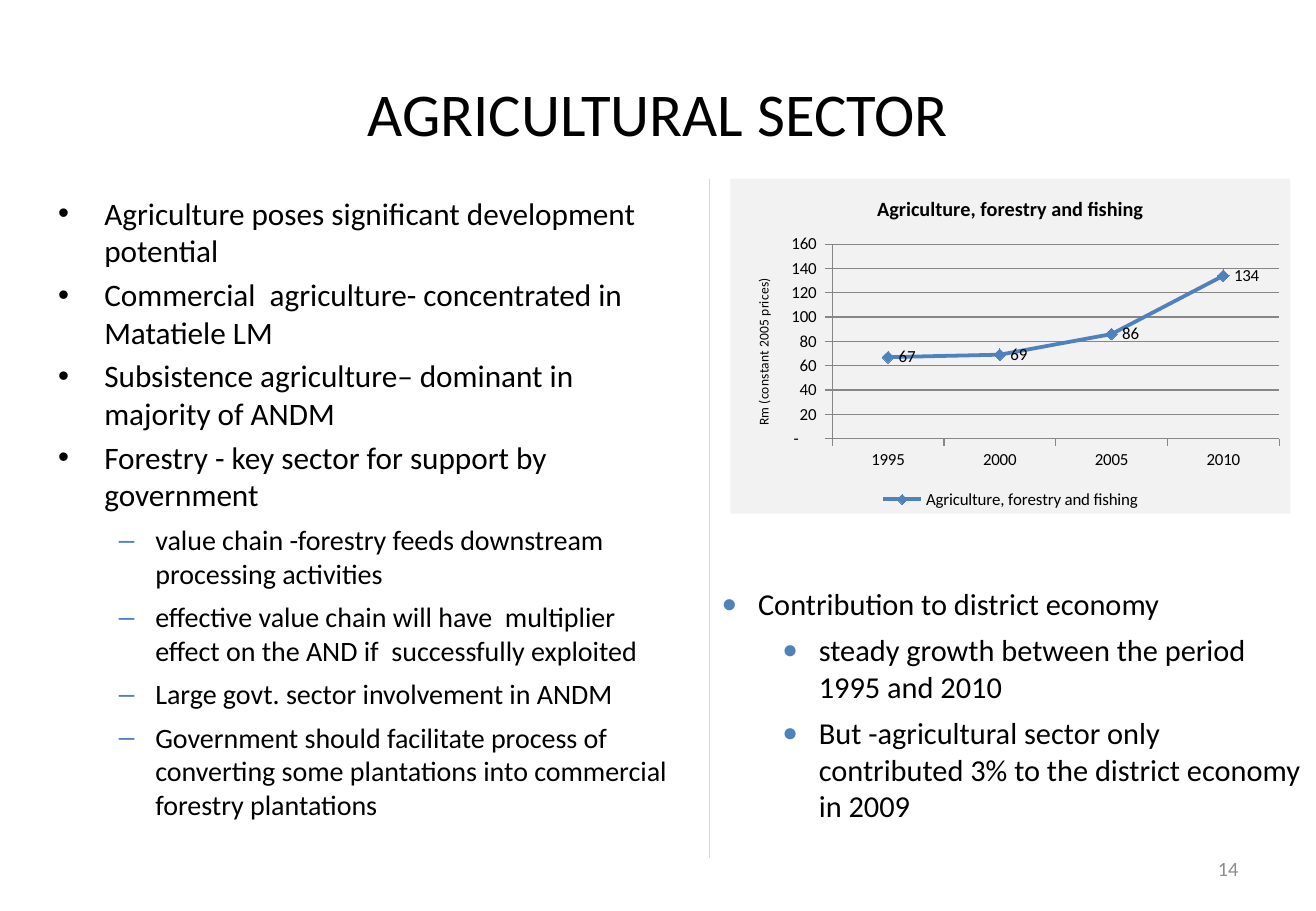
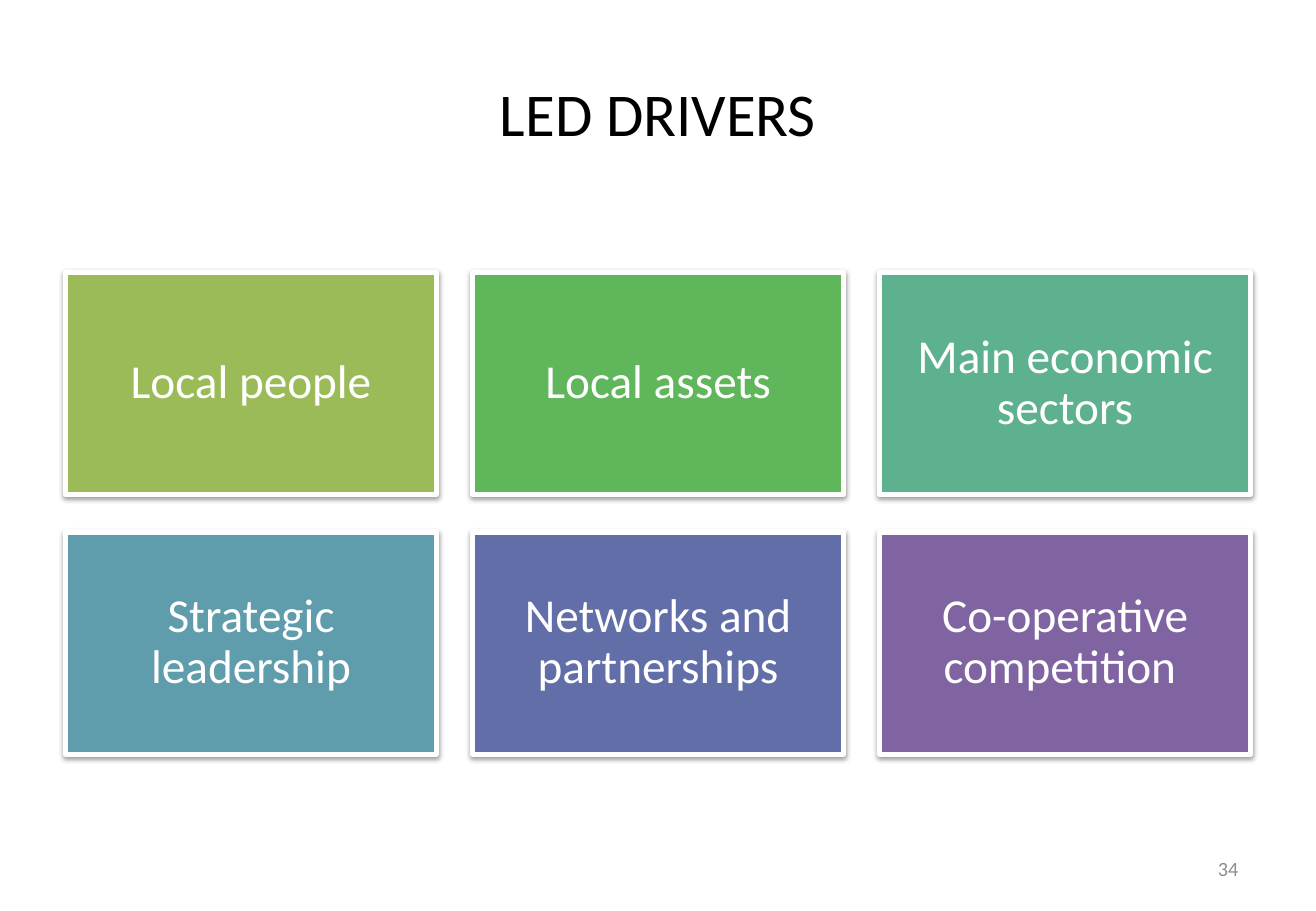
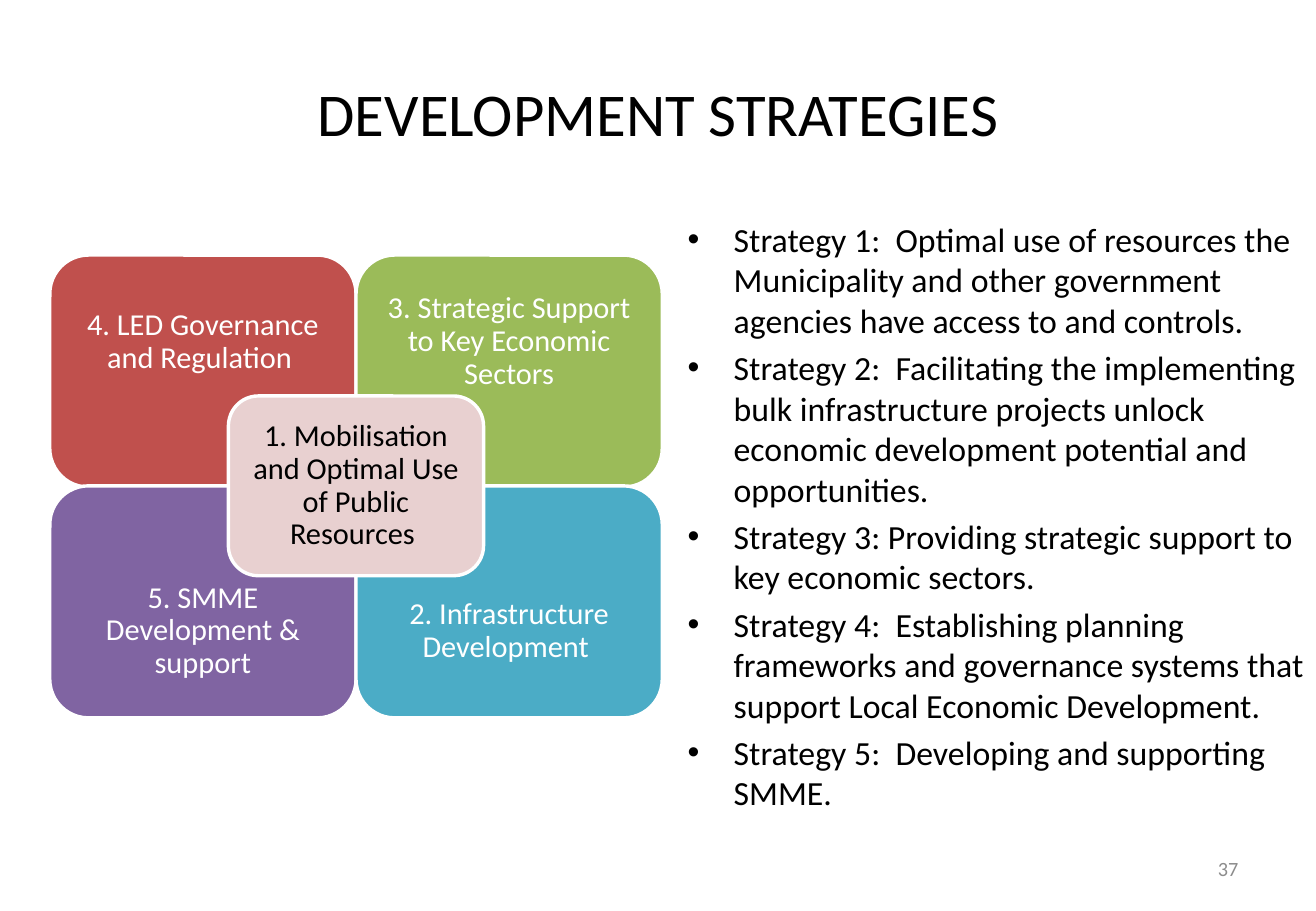
import pptx
import pptx.chart.data
import pptx.dml.color
import pptx.enum.chart
import pptx.enum.shapes
import pptx.enum.text
import pptx.oxml
import pptx.oxml.ns
import pptx.util

FONT = "Calibri"
BLACK, WHITE, BLUE, GREY = "000000", "FFFFFF", "4F81BD", "868686"
ALIGN = pptx.enum.text.PP_ALIGN
MIDDLE = pptx.enum.text.MSO_ANCHOR.MIDDLE
SHAPES = pptx.enum.shapes.MSO_SHAPE
CHARTS = pptx.enum.chart
INSETS = ("margin_left", "margin_top", "margin_right", "margin_bottom")
POINT = {"indent": 38, "hang": 38, "bullet": "•", "bullet_colour": BLACK, "scale": 100}
DASH = {"indent": 80, "hang": 30, "bullet": "–", "bullet_colour": BLUE, "scale": 100}
DOT = {"indent": 30, "hang": 30, "bullet": "●", "bullet_colour": BLUE, "scale": 85}
SUB_DOT = {**DOT, "indent": 80}


def px(count):
    return pptx.util.Emu(count * 9144)


def colour(value):
    return pptx.dml.color.RGBColor.from_string(value)


def assign(target, values):
    for name, value in values.items():
        setattr(target, name, value)


def parse_xml(tag, attributes="", children=""):
    names = pptx.oxml.ns.nsdecls("a", "c")
    return pptx.oxml.parse_xml(f"<{tag} {names} {attributes}>{children}</{tag}>")


def style_font(font, size, ink=BLACK, bold=False):
    assign(font, {"name": FONT, "size": pptx.util.Pt(size), "bold": bold})
    font.color.rgb = colour(ink)


def style_line(line, ink, width):
    line.color.rgb = colour(ink)
    line.width = pptx.util.Pt(width)


def style_fill(fill, ink):
    fill.solid()
    fill.fore_color.rgb = colour(ink)


def write_span(para, words, size, ink):
    span = para.add_run()
    span.text = words
    style_font(span.font, size, ink)


def add_label(page, at, words, size, align, ink=BLACK):
    box = page.shapes.add_textbox(*map(px, at))
    assign(box.text_frame, {"word_wrap": True, "vertical_anchor": MIDDLE})
    para = box.text_frame.paragraphs[0]
    para.alignment = align
    write_span(para, words, size, ink)


def add_bullet(para, kind):
    properties = para._p.get_or_add_pPr()
    properties.set("marL", str(px(kind["indent"])))
    properties.set("indent", str(px(-kind["hang"])))
    ink = f'<a:srgbClr val="{kind["bullet_colour"]}"/>'
    properties.append(parse_xml("a:buClr", children=ink))
    properties.append(parse_xml("a:buSzPct", f'val="{kind["scale"] * 1000}"'))
    properties.append(parse_xml("a:buFont", 'typeface="Arial"'))
    properties.append(parse_xml("a:buChar", f'char="{kind["bullet"]}"'))


def add_bullets(page, at, groups):
    box = page.shapes.add_textbox(*map(px, at))
    frame = box.text_frame
    frame.word_wrap = True
    items = [(kind, size, gap, words) for kind, size, gap, lines in groups for words in lines]
    for index, (kind, size, gap, words) in enumerate(items):
        para = frame.add_paragraph() if index else frame.paragraphs[0]
        para.space_before = pptx.util.Pt(gap)
        add_bullet(para, kind)
        write_span(para, words, size, BLACK)


def add_tile(page, kind, at, words, fill, size, border, insets, ink=WHITE):
    tile = page.shapes.add_shape(kind, *map(px, at))
    tile.shadow.inherit = False
    style_fill(tile.fill, fill)
    style_line(tile.line, WHITE, border)
    frame = tile.text_frame
    assign(frame, {"word_wrap": True, "vertical_anchor": MIDDLE})
    assign(frame, dict(zip(INSETS, map(px, insets))))
    para = frame.paragraphs[0]
    assign(para, {"alignment": ALIGN.CENTER, "line_spacing": 0.9})
    write_span(para, words, size, ink)
    return tile


def add_soft_shadow(tile):
    effects = tile._element.spPr.find(pptx.oxml.ns.qn("a:effectLst"))
    ink = f'<a:srgbClr val="{BLACK}"><a:alpha val="38000"/></a:srgbClr>'
    geometry = 'blurRad="40000" dist="20000" dir="5400000" rotWithShape="0"'
    effects.append(parse_xml("a:outerShdw", geometry, ink))


def add_divider(page, start, end):
    kind = pptx.enum.shapes.MSO_CONNECTOR.STRAIGHT
    divider = page.shapes.add_connector(kind, *map(px, start + end))
    style_line(divider.line, "DDD9C3", 0.75)
    divider._element.spPr.append(parse_xml("a:effectLst"))


def title_chart_part(part, words, size, bold):
    part.text_frame.text = words
    style_font(part.text_frame.paragraphs[0].runs[0].font, size, bold=bold)


def add_line_chart(page, at, name, unit, points):
    data = pptx.chart.data.CategoryChartData()
    data.categories = list(points)
    data.add_series(name, points.values())
    frame = page.shapes.add_chart(CHARTS.XL_CHART_TYPE.LINE_MARKERS, *map(px, at), data)
    chart = frame.chart
    style_font(chart.font, 10)
    assign(chart, {"has_title": True, "has_legend": True})
    title_chart_part(chart.chart_title, name, 12, True)
    assign(chart.legend, {"position": CHARTS.XL_LEGEND_POSITION.BOTTOM,
                          "include_in_layout": False})
    backdrop = '<a:solidFill><a:srgbClr val="F2F2F2"/></a:solidFill><a:ln><a:noFill/></a:ln>'
    body = chart._chartSpace.find(pptx.oxml.ns.qn("c:chart"))
    body.addnext(parse_xml("c:spPr", children=backdrop))

    values = chart.value_axis
    assign(values, {"minimum_scale": 0, "maximum_scale": 160, "major_unit": 20,
                    "has_major_gridlines": True})
    assign(values.tick_labels, {
        "number_format": '_ * #,##0_ ;_ * \\-#,##0_ ;_ * "-"??_ ;_ ',
        "number_format_is_linked": False})
    title_chart_part(values.axis_title, unit, 8, False)
    for axis in (values, chart.category_axis):
        axis.major_tick_mark = CHARTS.XL_TICK_MARK.OUTSIDE
        style_line(axis.format.line, GREY, 0.75)
    style_line(values.major_gridlines.format.line, GREY, 0.75)

    plot = chart.plots[0]
    plot.vary_by_categories = False
    series = plot.series[0]
    series.smooth = False
    style_line(series.format.line, BLUE, 2.25)
    assign(series.marker, {"style": CHARTS.XL_MARKER_STYLE.DIAMOND, "size": 7})
    style_fill(series.marker.format.fill, BLUE)
    style_line(series.marker.format.line, BLUE, 0.75)
    assign(series.data_labels, {"show_value": True, "number_format": "#,##0",
                                "number_format_is_linked": False,
                                "position": CHARTS.XL_LABEL_POSITION.RIGHT})


def add_page(deck, title, number):
    page = deck.slides.add_slide(deck.slide_layouts[6])
    add_label(page, (54, 30, 975, 125), title, 36, ALIGN.CENTER)
    add_label(page, (776, 695, 253, 40), number, 12, ALIGN.RIGHT, "8C8C8C")
    return page


def build_agriculture(deck):
    page = add_page(deck, "AGRICULTURAL SECTOR", "14")
    add_bullets(page, (38, 155, 529, 528), [
        (POINT, 18.5, 3.7, [
            "Agriculture poses significant development potential",
            "Commercial  agriculture- concentrated in Matatiele LM",
            "Subsistence agriculture– dominant in majority of ANDM",
            "Forestry - key sector for support by government"]),
        (DASH, 16.6, 5.8, [
            "value chain -forestry feeds downstream processing activities",
            "effective value chain will have  multiplier effect on the AND if  "
            "successfully exploited",
            "Large govt. sector involvement in ANDM",
            "Government should facilitate process of converting some plantations "
            "into commercial forestry plantations"])])
    add_line_chart(page, (601, 147, 461, 276), "Agriculture, forestry and fishing",
                   "Rm (constant 2005 prices)",
                   {"1995": 67, "2000": 69, "2005": 86, "2010": 134})
    add_bullets(page, (584, 477, 499, 220), [
        (DOT, 18, 5.8, ["Contribution to district economy"]),
        (SUB_DOT, 18, 5.8, [
            "steady growth between the period 1995 and 2010",
            "But -agricultural sector only contributed 3% to the district economy "
            "in 2009"])])
    add_divider(page, (584, 147), (584, 706))


def build_drivers(deck):
    page = add_page(deck, "LED DRIVERS", "34")
    drivers = [("Local people", "9BBB59"), ("Local assets", "5FB65B"),
               ("Main economic sectors", "5DB18E"), ("Strategic leadership", "5F9DAC"),
               ("Networks and partnerships", "626EA7"),
               ("Co-operative competition ", "8064A2")]
    for index, (words, fill) in enumerate(drivers):
        row, column = divmod(index, 3)
        at = (54 + 335 * column, 224 + 214 * row, 305, 183)
        add_soft_shadow(add_tile(page, SHAPES.RECTANGLE, at, words, fill, 28, 3, [12] * 4))


def build_strategies(deck):
    page = add_page(deck, "DEVELOPMENT STRATEGIES", "37")
    add_bullets(page, (556, 175, 527, 533), [(POINT, 20, 4, [
        "Strategy 1:  Optimal use of resources the Municipality and other government "
        "agencies have access to and controls.",
        "Strategy 2:  Facilitating the implementing bulk infrastructure projects unlock "
        "economic development potential and opportunities.",
        "Strategy 3: Providing strategic support to key economic sectors.",
        "Strategy 4:  Establishing planning frameworks and governance systems that "
        "support Local Economic Development.",
        "Strategy 5:  Developing and supporting SMME."])])
    quadrants = [("4. LED Governance and Regulation ", "C0504D"),
                 ("3. Strategic Support to Key Economic Sectors", "9BBB59"),
                 ("5. SMME Development & support", "8064A2"),
                 ("2. Infrastructure Development ", "4BACC6")]
    for index, (words, fill) in enumerate(quadrants):
        row, column = divmod(index, 2)
        at = (41 + 252 * column, 210 + 190 * row, 252, 191)
        insets = (12, 60, 12, 12) if row else (12, 12, 12, 60)
        add_tile(page, SHAPES.ROUNDED_RECTANGLE, at, words, fill, 18, 2, insets)
    add_tile(page, SHAPES.ROUNDED_RECTANGLE, (188, 326, 210, 148),
             "1. Mobilisation and Optimal Use of Public Resources ",
             "E8D0D0", 18, 2, [8] * 4, BLACK)


def main():
    deck = pptx.Presentation()
    assign(deck, {"slide_width": px(1083), "slide_height": px(750)})
    build_agriculture(deck)
    build_drivers(deck)
    build_strategies(deck)
    deck.save("out.pptx")


if __name__ == "__main__":
    main()
